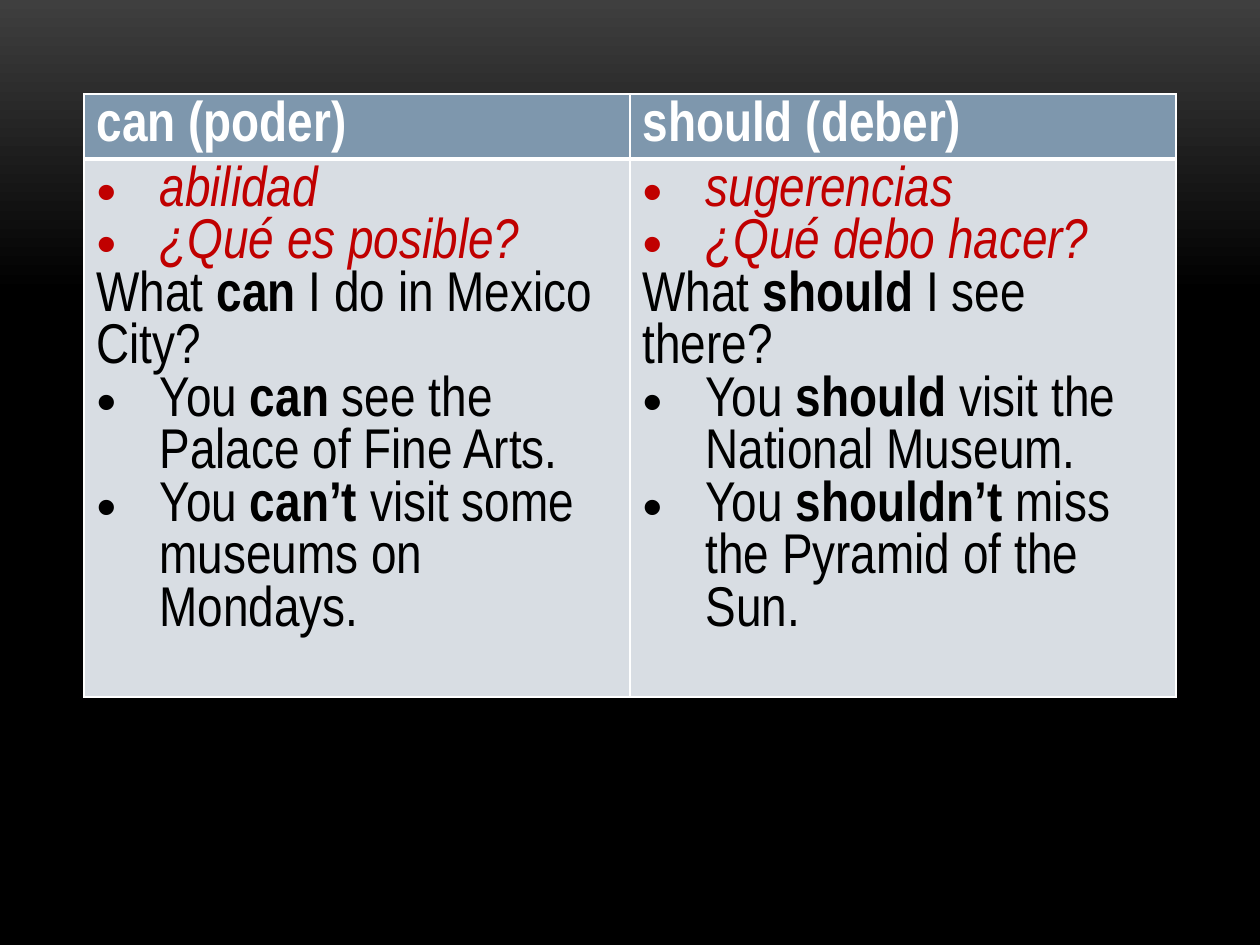
import pptx
import pptx.util
import pptx.dml.color
import pptx.oxml
import pptx.oxml.ns

RGBColor = pptx.dml.color.RGBColor
WHITE = RGBColor(0xFF, 0xFF, 0xFF)
BLACK = RGBColor(0x00, 0x00, 0x00)
CHARCOAL = RGBColor(0x3F, 0x3F, 0x3F)
RED = RGBColor(0xC0, 0x00, 0x00)
HEADER_BLUE = RGBColor(0x7E, 0x97, 0xAD)
BODY_GREY = RGBColor(0xD8, 0xDD, 0xE3)

FONT = "Arial Narrow"
PX_PER_INCH = 126
BULLET_INDENT = 63

# Each column: header, hints, question and answers as (before, bold, after)
COLUMNS = [
    ("can (poder)", ["abilidad", "¿Qué es posible?"],
     ("What ", "can", " I do in Mexico City?"),
     [("You ", "can", " see the Palace of Fine Arts."),
      ("You ", "can’t ", "visit some museums on Mondays.")]),
    ("should (deber)", ["sugerencias", "¿Qué debo hacer?"],
     ("What ", "should", " I see there?"),
     [("You ", "should", " visit the National Museum."),
      ("You ", "shouldn’t", " miss the Pyramid of the Sun.")]),
]


def px(length):
    return pptx.util.Emu(round(length * 914400 / PX_PER_INCH))


def paint_background(page):
    fill = page.background.fill
    fill.gradient()
    fill.gradient_angle = 270
    for stop, color, position in zip(fill.gradient_stops, (CHARCOAL, BLACK), (0, 0.31)):
        stop.color.rgb = color
        stop.position = position


def style_cell(cell, color, top, bottom):
    """Give the cell white borders, with widths in points, and a fill."""
    properties = cell._tc.get_or_add_tcPr()
    for side, width in (("L", 1), ("R", 1), ("T", top), ("B", bottom)):
        properties.append(pptx.oxml.parse_xml(
            f'<a:ln{side} {pptx.oxml.ns.nsdecls("a")} w="{pptx.util.Pt(width)}">'
            f'<a:solidFill><a:srgbClr val="{WHITE}"/></a:solidFill></a:ln{side}>'))
    cell.fill.solid()
    cell.fill.fore_color.rgb = color


def add_bullet(para):
    properties = para._p.get_or_add_pPr()
    properties.set("marL", str(px(BULLET_INDENT)))
    properties.set("indent", str(-px(BULLET_INDENT)))
    for tag, name, value in (("buFont", "typeface", "Arial"), ("buChar", "char", "•")):
        properties.append(pptx.oxml.parse_xml(
            f'<a:{tag} {pptx.oxml.ns.nsdecls("a")} {name}="{value}"/>'))


def write_para(para, parts, color, bullet=False, italic=False):
    """Write the parts as runs; every second part is bold."""
    if bullet:
        add_bullet(para)
    para.font.name = FONT
    para.font.size = pptx.util.Pt(32)
    para.font.italic = italic
    para.font.color.rgb = color
    for index, part in enumerate(parts):
        span = para.add_run()
        span.text = part
        span.font.bold = index % 2 == 1


def fill_body(frame, hints, question, answers):
    lines = [([hint], RED, True, True) for hint in hints]
    lines.append((question, BLACK))
    lines += [(answer, BLACK, True) for answer in answers]
    for index, line in enumerate(lines):
        para = frame.add_paragraph() if index else frame.paragraphs[0]
        write_para(para, *line)


def add_verb_table(page, left, top, width, header_height, body_height):
    table = page.shapes.add_table(2, len(COLUMNS), px(left), px(top), px(width),
                                  px(header_height + body_height)).table
    table.rows[0].height = px(header_height)
    table.rows[1].height = px(body_height)
    for index, (title, hints, question, answers) in enumerate(COLUMNS):
        table.columns[index].width = px(width / len(COLUMNS))
        header, body = table.cell(0, index), table.cell(1, index)
        style_cell(header, HEADER_BLUE, 1, 3)
        style_cell(body, BODY_GREY, 3, 1)
        write_para(header.text_frame.paragraphs[0], ["", title], WHITE)
        fill_body(body.text_frame, hints, question, answers)


def main():
    deck = pptx.Presentation()
    deck.slide_width, deck.slide_height = px(1260), px(945)
    page = deck.slides.add_slide(deck.slide_layouts[6])
    paint_background(page)
    add_verb_table(page, left=84, top=94, width=1092, header_height=65, body_height=538)
    deck.save("out.pptx")


if __name__ == "__main__":
    main()
